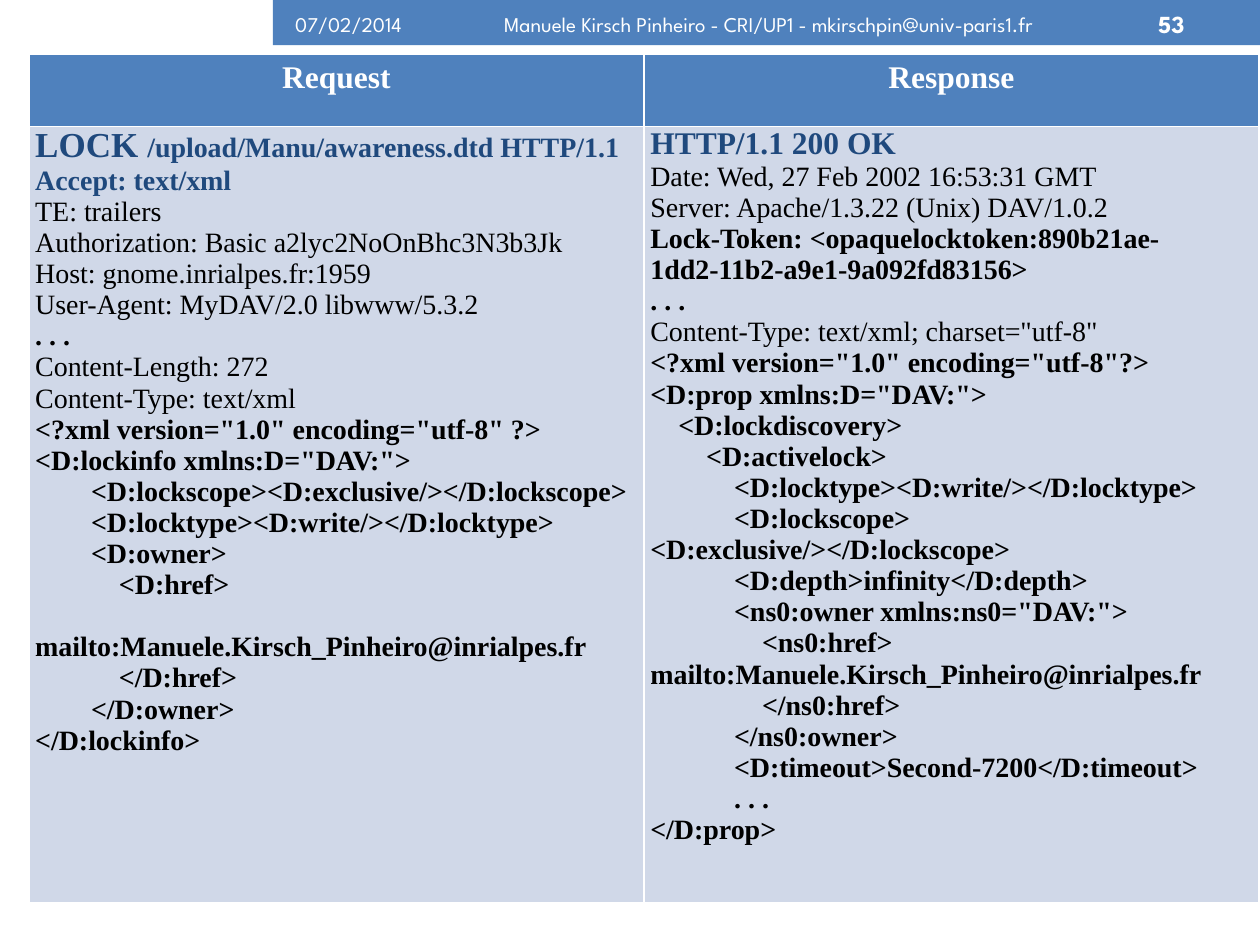
from lxml import etree
from pptx import Presentation
from pptx.dml.color import RGBColor
from pptx.enum.shapes import MSO_SHAPE
from pptx.enum.text import MSO_ANCHOR, PP_ALIGN
from pptx.oxml.ns import qn
from pptx.util import Cm, Pt

RECT = MSO_SHAPE.RECTANGLE
MIDDLE = MSO_ANCHOR.MIDDLE
LEFT, CENTER, RIGHT = PP_ALIGN.LEFT, PP_ALIGN.CENTER, PP_ALIGN.RIGHT
JUSTIFY = PP_ALIGN.JUSTIFY
COLORS = {"blue": "4F81BD", "navy": "1F497D", "pale": "D0D8E8",
          "white": "FFFFFF", "black": "000000"}
SANS, SERIF = "League Spartan", "Times New Roman"

# Each block: size, colour, bold, lines
REQUEST = [
    (16, "navy", True, """LOCK /upload/Manu/awareness.dtd HTTP/1.1
Accept: text/xml"""),
    (16, "black", False, """TE: trailers
Authorization: Basic a2lyc2NoOnBhc3N3b3Jk
Host: gnome.inrialpes.fr:1959
User-Agent: MyDAV/2.0 libwww/5.3.2"""),
    (16, "black", True, ". . ."),
    (16, "black", False, """Content-Length: 272
Content-Type: text/xml"""),
    (16, "black", True, """<?xml version="1.0" encoding="utf-8" ?>
<D:lockinfo xmlns:D="DAV:">
        <D:lockscope><D:exclusive/></D:lockscope>
        <D:locktype><D:write/></D:locktype>
        <D:owner>
            <D:href>
                mailto:Manuele.Kirsch_Pinheiro@inrialpes.fr
            </D:href>
        </D:owner>
</D:lockinfo>"""),
]
RESPONSE = [
    (18, "navy", True, "HTTP/1.1 200 OK"),
    (16, "black", False, """Date: Wed, 27 Feb 2002 16:53:31 GMT
Server: Apache/1.3.22 (Unix) DAV/1.0.2"""),
    (16, "black", True, """Lock-Token: <opaquelocktoken:890b21ae-
1dd2-11b2-a9e1-9a092fd83156>
. . ."""),
    (16, "black", False, 'Content-Type: text/xml; charset="utf-8"'),
    (16, "black", True, """<?xml version="1.0" encoding="utf-8"?>
<D:prop xmlns:D="DAV:">
    <D:lockdiscovery>
        <D:activelock>
            <D:locktype><D:write/></D:locktype>
            <D:lockscope> <D:exclusive/></D:lockscope>
            <D:depth>infinity</D:depth>
            <ns0:owner xmlns:ns0="DAV:">
                <ns0:href> mailto:Manuele.Kirsch_Pinheiro@inrialpes.fr
                </ns0:href>
            </ns0:owner>
            <D:timeout>Second-7200</D:timeout>
            . . .
</D:prop>"""),
]


def style(para, face, size, color, bold=False):
    for run in para.runs:
        run.font.name = face
        run.font.size = Pt(size)
        run.font.bold = bold
        run.font.color.rgb = RGBColor.from_string(COLORS[color])


def paint(cell, color):
    """Give a cell thin white borders and a solid fill."""
    props = cell._tc.get_or_add_tcPr()
    for side in ("lnL", "lnR", "lnT", "lnB"):
        line = etree.SubElement(props, qn(f"a:{side}"), w=str(Pt(1)))
        fill = etree.SubElement(line, qn("a:solidFill"))
        etree.SubElement(fill, qn("a:srgbClr"), val=COLORS["white"])
    cell.fill.solid()
    cell.fill.fore_color.rgb = RGBColor.from_string(COLORS[color])


prs = Presentation()
prs.slide_width, prs.slide_height = Cm(25.4), Cm(19.05)
slide = prs.slides.add_slide(prs.slide_layouts[6])

# Top band
band = slide.shapes.add_shape(RECT, Cm(5.5), 0, Cm(19.9), Cm(0.91))
band.shadow.inherit = False
band.fill.solid()
band.fill.fore_color.rgb = RGBColor.from_string(COLORS["blue"])
band.line.fill.background()

for left, width, text, size, bold, align in [
    (5.7, 3, "07/02/2014", 12, False, LEFT),
    (8.5, 14, "Manuele Kirsch Pinheiro - CRI/UP1 - mkirschpin@univ-paris1.fr",
     12, False, CENTER),
    (22.7, 1.43, "53", 14, True, RIGHT),
]:
    box = slide.shapes.add_textbox(Cm(left), Cm(0.05), Cm(width), Cm(0.86))
    frame = box.text_frame
    frame.word_wrap = True
    frame.vertical_anchor = MIDDLE
    para = frame.paragraphs[0]
    para.text = text
    para.alignment = align
    style(para, SANS, size, "white", bold)

# Request and response table
table = slide.shapes.add_table(2, 2, Cm(0.58), Cm(1.1), Cm(24.8), Cm(15.95)).table
table.rows[0].height, table.rows[1].height = Cm(1.45), Cm(14.5)

for col, (title, blocks) in enumerate([("Request", REQUEST), ("Response", RESPONSE)]):
    table.columns[col].width = Cm(12.4)
    head, body = table.cell(0, col), table.cell(1, col)
    paint(head, "blue")
    para = head.text_frame.paragraphs[0]
    para.text = title
    para.alignment = CENTER
    style(para, SERIF, 18, "white", True)

    paint(body, "pale")
    body.margin_left = body.margin_right = Cm(0.13)
    body.margin_top = body.margin_bottom = 0
    frame = body.text_frame
    frame.text = "\n".join(block[3] for block in blocks)
    paras = iter(frame.paragraphs)
    for size, color, bold, lines in blocks:
        for line in lines.split("\n"):
            style(next(paras), SERIF, size, color, bold)

# The method name stands out from the rest of its line
first = table.cell(1, 0).text_frame.paragraphs[0]
verb, rest = first.text.split(" ", 1)
first.text = verb + " "
first.add_run().text = rest
style(first, SERIF, 16, "navy", True)
first.runs[0].font.size = Pt(20)

last = table.cell(1, 1).text_frame.paragraphs[-1]
last.alignment = JUSTIFY
last.space_after = Pt(6)

prs.save("out.pptx")
